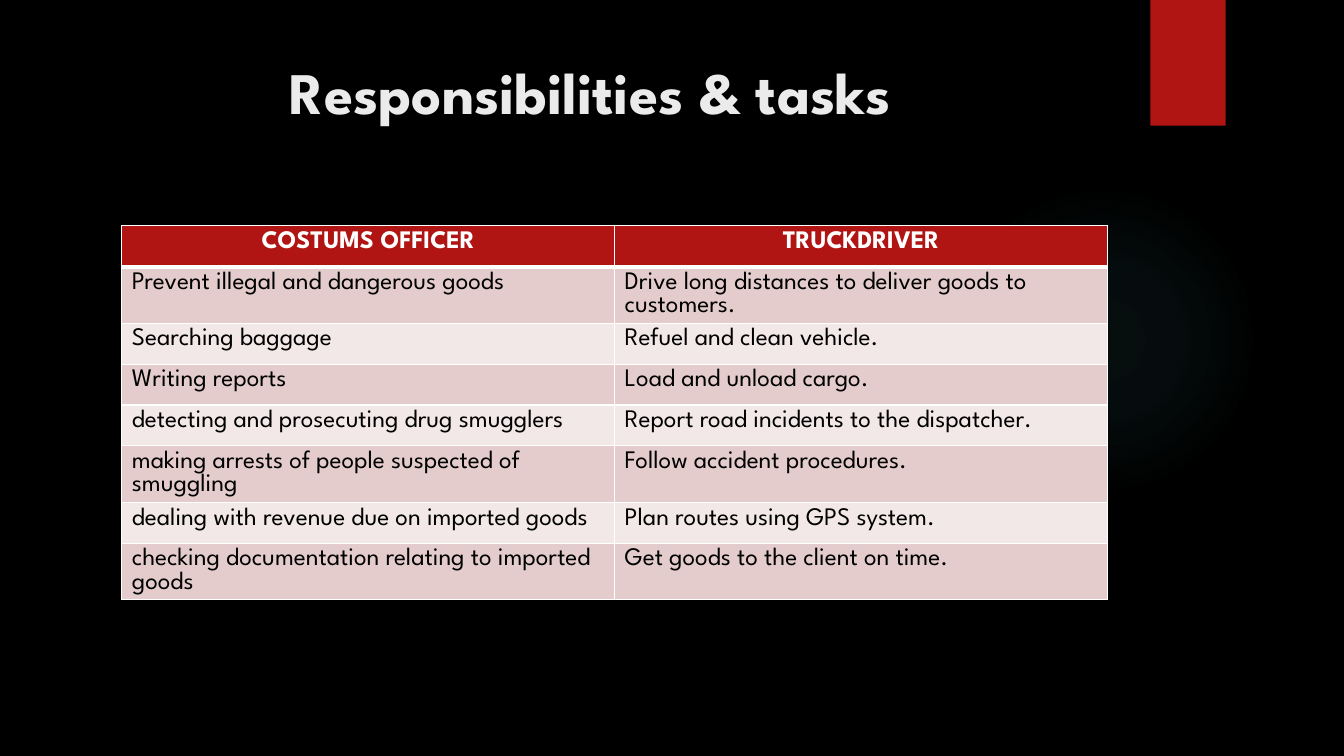
from lxml import etree
from pptx import Presentation
from pptx.dml.color import RGBColor
from pptx.enum.shapes import MSO_SHAPE
from pptx.enum.text import MSO_ANCHOR, PP_ALIGN
from pptx.oxml import parse_xml
from pptx.oxml.ns import nsdecls, qn
from pptx.util import Cm, Pt

OVAL, RECT = MSO_SHAPE.OVAL, MSO_SHAPE.RECTANGLE
TOP = MSO_ANCHOR.TOP
LEFT, CENTER = PP_ALIGN.LEFT, PP_ALIGN.CENTER
BLACK = RGBColor(0x00, 0x00, 0x00)
WHITE = RGBColor(0xFF, 0xFF, 0xFF)
OFF_WHITE = RGBColor(0xEB, 0xEB, 0xEB)
RED = RGBColor(0xB0, 0x15, 0x13)
PINK = RGBColor(0xE4, 0xCC, 0xCC)
PALE = RGBColor(0xF2, 0xE8, 0xE7)
TEAL = RGBColor(0x50, 0xB9, 0xC1)
FONT = "League Spartan"

ROWS = [
    ("COSTUMS OFFICER", "TRUCKDRIVER"),
    ("Prevent illegal and dangerous goods",
     "Drive long distances to deliver goods to customers."),
    ("Searching baggage", "Refuel and clean vehicle."),
    ("Writing reports", "Load and unload cargo."),
    ("detecting and prosecuting drug smugglers",
     "Report road incidents to the dispatcher."),
    ("making arrests of people suspected of smuggling",
     "Follow accident procedures."),
    ("dealing with revenue due on imported goods",
     "Plan routes using GPS system."),
    ("checking documentation relating to imported goods",
     "Get goods to the client on time."),
]


def add_text(tf, text, size, color, bold, align):
    p = tf.paragraphs[0]
    p.alignment = align
    r = p.add_run()
    r.text = text
    r.font.name = FONT
    r.font.size = Pt(size)
    r.font.bold = bold
    r.font.color.rgb = color


def set_borders(cell, bottom):
    tcPr = cell._tc.get_or_add_tcPr()
    for i, (side, width) in enumerate(
            [("lnL", 1), ("lnR", 1), ("lnT", 1), ("lnB", bottom)]):
        ln = etree.Element(qn(f"a:{side}"), w=str(Pt(width)))
        fill = etree.SubElement(ln, qn("a:solidFill"))
        etree.SubElement(fill, qn("a:srgbClr"), val=str(WHITE))
        tcPr.insert(i, ln)


prs = Presentation()
prs.slide_width = Cm(33.87)
prs.slide_height = Cm(19.05)
s = prs.slides.add_slide(prs.slide_layouts[5])
s.background.fill.solid()
s.background.fill.fore_color.rgb = BLACK

glow = s.shapes.add_shape(OVAL, Cm(23.9), Cm(4.65), Cm(7.82), Cm(7.82))
glow.shadow.inherit = False
glow.line.fill.background()
stops = "".join(
    f'<a:gs pos="{pos * 1000}"><a:srgbClr val="{TEAL}">'
    f'<a:alpha val="{alpha * 1000}"/></a:srgbClr></a:gs>'
    for pos, alpha in [(0, 7), (36, 6), (69, 0)])
glow.element.spPr.find(qn("a:prstGeom")).addnext(parse_xml(
    f'<a:gradFill {nsdecls("a")}><a:gsLst>{stops}</a:gsLst>'
    '<a:path path="circle">'
    '<a:fillToRect l="50000" t="50000" r="50000" b="50000"/>'
    '</a:path></a:gradFill>'))

ribbon = s.shapes.add_shape(RECT, Cm(28.99), Cm(0), Cm(1.9), Cm(3.17))
ribbon.shadow.inherit = False
ribbon.fill.solid()
ribbon.fill.fore_color.rgb = RED
ribbon.line.fill.background()

title = s.shapes.title
title.left, title.top = Cm(1.8), Cm(1.27)
title.width, title.height = Cm(26.14), Cm(3.89)
title.text_frame.vertical_anchor = TOP
add_text(title.text_frame, "Responsibilities & tasks", 42, OFF_WHITE, True, CENTER)

table = s.shapes.add_table(
    len(ROWS), 2, Cm(3.07), Cm(5.69), Cm(24.84), Cm(8.24)).table
for row in table.rows:
    row.height = Cm(1.03)
for i, texts in enumerate(ROWS):
    header = i == 0
    for j, text in enumerate(texts):
        cell = table.cell(i, j)
        cell.fill.solid()
        cell.fill.fore_color.rgb = RED if header else PINK if i % 2 else PALE
        set_borders(cell, 3 if header else 1)
        add_text(cell.text_frame, text, 18, WHITE if header else BLACK,
                 header, CENTER if header else LEFT)

prs.save("out.pptx")
